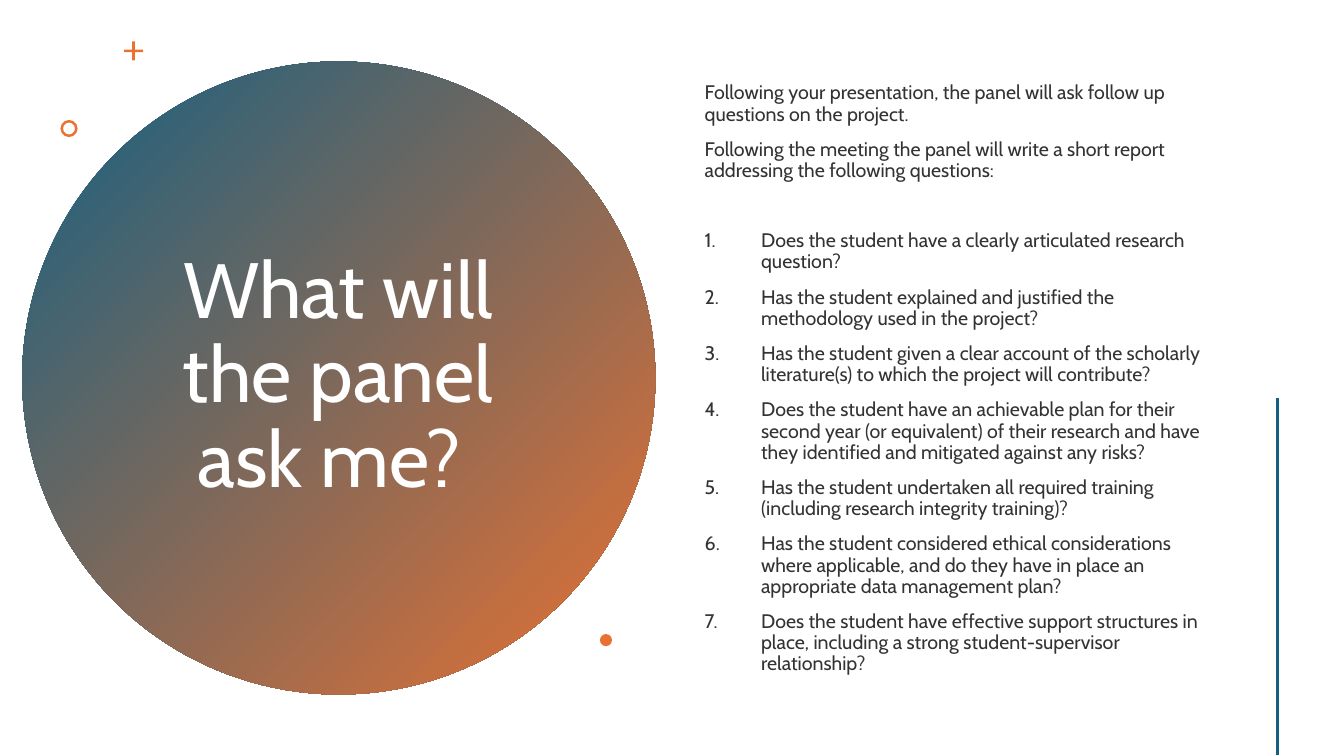
from lxml import etree
from pptx import Presentation
from pptx.dml.color import RGBColor
from pptx.enum import shapes, text
from pptx.oxml import ns
from pptx.util import Inches, Pt

BLUE = RGBColor(0x15, 0x60, 0x82)
ORANGE = RGBColor(0xE9, 0x71, 0x32)
WHITE = RGBColor(0xFF, 0xFF, 0xFF)
INK = RGBColor(0x33, 0x33, 0x33)
FACE = "Cabin"

INTRO = [
    "Following your presentation, the panel will ask follow up questions on the project.",
    "Following the meeting the panel will write a short report addressing the following questions:",
]
ASKS = [
    "Does the student have a clearly articulated research question?",
    "Has the student explained and justified the methodology used in the project?",
    "Has the student given a clear account of the scholarly literature(s) to which the project will contribute?",
    "Does the student have an achievable plan for their second year (or equivalent) of their research and have they identified and mitigated against any risks?",
    "Has the student undertaken all required training (including research integrity training)?",
    "Has the student considered ethical considerations where applicable, and do they have in place an appropriate data management plan?",
    "Does the student have effective support structures in place, including a strong student-supervisor relationship?",
]


def style(item, values):
    """Set each named attribute of the item."""
    for name, value in values.items():
        setattr(item, name, value)


def write(para, words, size, color):
    """Fill a paragraph with words in the slide's typeface."""
    para.text = words
    para.line_spacing = 0.9
    style(para.font, {"name": FACE, "size": Pt(size)})
    para.font.color.rgb = color


def number(para):
    """Give a paragraph a hanging automatic number."""
    props = para._p.get_or_add_pPr()
    props.set("marL", str(Inches(0.56)))
    props.set("indent", str(-Inches(0.56)))
    etree.SubElement(props, ns.qn("a:buAutoNum"), type="arabicPeriod")


def mark(slide, kind, left, top, side):
    """Draw a square-boxed orange shape without outline."""
    shape = slide.shapes.add_shape(
        kind, Inches(left), Inches(top), Inches(side), Inches(side))
    shape.shadow.inherit = False
    shape.fill.solid()
    shape.fill.fore_color.rgb = ORANGE
    shape.line.fill.background()
    return shape


def disc(slide, left, top, side):
    """Draw the gradient disc with the title and small marks around it."""
    kinds = shapes.MSO_SHAPE
    ball = mark(slide, kinds.OVAL, left, top, side)
    ball.fill.gradient()
    ball.fill.gradient_angle = 315
    for stop, color, place in zip(ball.fill.gradient_stops, (BLUE, ORANGE), (0, 1)):
        stop.color.rgb = color
        stop.position = place

    title = slide.shapes.title
    title.element.addprevious(ball.element)
    style(title, {"left": Inches(left + 1.14), "top": Inches(top + 0.8),
                  "width": Inches(3.99), "height": Inches(4.67)})
    style(title.text_frame, {"word_wrap": True,
                             "auto_size": text.MSO_AUTO_SIZE.NONE,
                             "vertical_anchor": text.MSO_ANCHOR.MIDDLE})
    head = title.text_frame.paragraphs[0]
    write(head, "What will the panel ask me? ", 56, WHITE)
    head.alignment = text.PP_ALIGN.CENTER

    plus = mark(slide, kinds.CROSS, left + 1.01, top - 0.2, 0.19)
    plus.adjustments[0] = 0.43
    ring = mark(slide, kinds.DONUT, left + 0.38, top + 0.58, 0.17)
    ring.adjustments[0] = 0.15
    mark(slide, kinds.OVAL, left + 5.73, top + 5.68, 0.12)


def body(slide, left, top, width, height):
    """Write the introduction and the numbered questions."""
    box = slide.shapes.add_textbox(
        Inches(left), Inches(top), Inches(width), Inches(height))
    frame = box.text_frame
    style(frame, {"word_wrap": True, "vertical_anchor": text.MSO_ANCHOR.MIDDLE})
    for i, words in enumerate(INTRO + ASKS):
        para = frame.add_paragraph() if i else frame.paragraphs[0]
        if i:
            para.space_before = Pt(35 if i == len(INTRO) else 10)
        para.line_spacing = 0.9
        if i >= len(INTRO):
            number(para)
        write(para, words, 14, INK)


def rule(slide, left, top, height):
    """Draw the upright line at the right edge."""
    line = slide.shapes.add_connector(
        shapes.MSO_CONNECTOR.STRAIGHT, Inches(left), Inches(top),
        Inches(left), Inches(top + height))
    line.line.color.rgb = BLUE
    line.line.width = Pt(2)
    etree.SubElement(line.element.spPr, ns.qn("a:effectLst"))


def main():
    """Build and save the slide."""
    deck = Presentation()
    style(deck, {"slide_width": Inches(13.33), "slide_height": Inches(7.5)})
    slide = deck.slides.add_slide(deck.slide_layouts[5])
    disc(slide, 0.22, 0.61, 6.28)
    body(slide, 6.89, 0.57, 5.22, 6.38)
    rule(slide, 12.67, 3.95, 3.54)
    deck.save("out.pptx")


if __name__ == "__main__":
    main()
